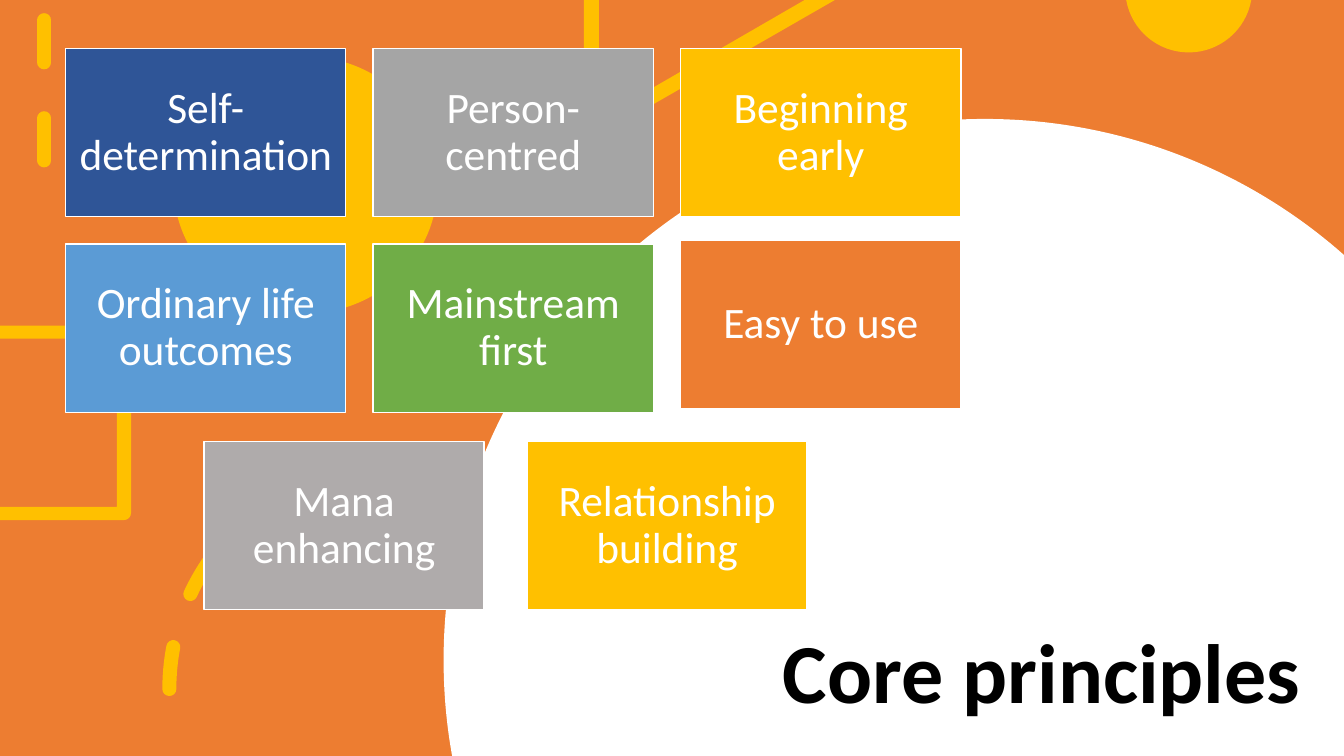
import math
import pptx
import pptx.util
import pptx.dml.color
import pptx.enum.dml
import pptx.enum.shapes
import pptx.enum.text
import pptx.oxml
import pptx.oxml.ns
import lxml.etree

TITLE = "Core principles"
TILES = [
    ("Self-determination", "navy", 0, 0),
    ("Person-centred", "grey", 1, 0),
    ("Beginning early", "gold", 2, 0),
    ("Ordinary life outcomes", "sky", 0, 1),
    ("Mainstream first", "green", 1, 1),
    ("Mana enhancing", "stone", 0.45, 2.01),
    ("Easy to use", "orange", 2, 0.98),
    ("Relationship building", "gold", 1.5, 2.01),
]
THEME = {
    "font": "Calibri", "title_size": 60, "tile_size": 31, "dash_width": 10,
    "white": "FFFFFF", "black": "000000", "orange": "ED7D31", "gold": "FFC000",
    "navy": "2F5597", "grey": "A5A5A5", "sky": "5B9BD5", "green": "70AD47", "stone": "AFABAB",
}
WIDTH, HEIGHT = 13.33, 7.5
GRID = {"left": 0.65, "top": 0.48, "column": 3.05, "row": 1.94, "width": 2.78, "height": 1.67}
INSET = 0.13
BEND = 0.07
SHAPES = pptx.enum.shapes.MSO_SHAPE
ANCHORS = pptx.enum.text.MSO_ANCHOR
ALIGNMENTS = pptx.enum.text.PP_ALIGN
Inches = pptx.util.Inches


def colour(name):
    return pptx.dml.color.RGBColor.from_string(THEME[name])


def apply(target, values):
    for name, value in values.items():
        setattr(target, name, value)


def lines(*points):
    return [[point] for point in points]


def arc(centre, radius, *angles):
    def place(angle, pull):
        cosine, sine = math.cos(angle), math.sin(angle)
        return (centre[0] + radius * (cosine - pull * sine), centre[1] - radius * (sine + pull * cosine))

    turns = [math.radians(angle) for angle in angles]
    segments = [[place(turns[0], 0)]]
    for start, end in zip(turns, turns[1:]):
        pull = 4 / 3 * math.tan((end - start) / 4)
        segments.append([place(start, pull), place(end, -pull), place(end, 0)])
    return segments


def paint(shape, fill):
    shape.shadow.inherit = False
    shape.fill.solid()
    shape.fill.fore_color.rgb = colour(fill)
    shape.line.fill.background()


def add_outline(slide, segments, fill):
    points = [(Inches(x), Inches(y)) for segment in segments for x, y in segment]
    builder = slide.shapes.build_freeform(*points[0], scale=1)
    builder.add_line_segments(points[1:], close=True)
    shape = builder.convert_to_shape()
    steps = iter(shape._element.findall(".//" + pptx.oxml.ns.qn("a:lnTo")))
    for segment in segments[1:]:
        parts = [next(steps) for point in segment]
        if len(parts) == 3:
            curve = lxml.etree.Element(pptx.oxml.ns.qn("a:cubicBezTo"))
            parts[0].addprevious(curve)
            for part in parts:
                curve.append(part[0])
                part.getparent().remove(part)
    paint(shape, fill)


def add_preset(slide, kind, box, fill):
    shape = slide.shapes.add_shape(kind, *map(Inches, box))
    paint(shape, fill)
    return shape


def dash(shape):
    shape.line.color.rgb = colour("gold")
    apply(shape.line, {"width": pptx.util.Pt(THEME["dash_width"]),
                       "dash_style": pptx.enum.dml.MSO_LINE.DASH})
    shape.line._get_or_add_ln().set("cap", "rnd")


def write(shape, text, size, tint, bold, alignment, anchor):
    frame = shape.text_frame
    apply(frame, {"text": text, "word_wrap": True, "vertical_anchor": anchor,
                  "auto_size": pptx.enum.text.MSO_AUTO_SIZE.NONE})
    paragraph = frame.paragraphs[0]
    apply(paragraph, {"alignment": alignment, "line_spacing": 0.9})
    font = paragraph.runs[0].font
    apply(font, {"name": THEME["font"], "size": pptx.util.Pt(THEME[size]), "bold": bold})
    font.color.rgb = colour(tint)


def add_title(slide):
    title = slide.shapes.title
    apply(title, {"left": Inches(5.79), "top": Inches(4.6), "width": Inches(7.21), "height": Inches(2.61)})
    write(title, TITLE, "title_size", "black", True, ALIGNMENTS.RIGHT, ANCHORS.BOTTOM)
    title._element.getparent().append(title._element)


def add_backdrop(slide):
    add_preset(slide, SHAPES.RECTANGLE, (0, 0, WIDTH, HEIGHT), "orange")
    centre, radius = (9.77, 6.55), 5.37
    right = math.degrees(math.acos((WIDTH - centre[0]) / radius))
    left = 180 + math.degrees(math.asin((HEIGHT - centre[1]) / radius))
    add_outline(slide, arc(centre, radius, right, 90, 180, left) + lines((WIDTH, HEIGHT)), "white")


def add_ornaments(slide):
    line = slide.shapes.add_connector(pptx.enum.shapes.MSO_CONNECTOR.STRAIGHT,
                                      *map(Inches, (0.44, 0.2, 0.44, 1.95)))
    dash(line)
    line._element.spPr.append(pptx.oxml.parse_xml(
        '<a:effectLst xmlns:a="http://schemas.openxmlformats.org/drawingml/2006/main"/>'))

    drop, radius = (11.79, -0.11), 0.63
    edge = math.degrees(math.asin(drop[1] / radius))
    add_outline(slide, arc(drop, radius, edge, -90, -180 - edge), "gold")
    add_preset(slide, SHAPES.OVAL, (1.72, 0.56, 2.62, 2.55), "gold")

    wedge = lines((5.79, 0), (5.94, 0), (5.94, 1.18), (7.98, 0), (8.28, 0))
    add_outline(slide, wedge + arc((5.86, 1.31), BEND, 300, 270, 180), "gold")

    bracket = lines((0, 3.23)) + arc((1.23, 3.3), BEND, 90, 0) + arc((1.23, 5.09), BEND, 0, -90)
    add_outline(slide, bracket + lines((0, 5.16), (0, 5.03), (1.16, 5.03), (1.16, 3.36), (0, 3.36)), "gold")

    sweep = slide.shapes.add_shape(SHAPES.ARC, *map(Inches, (1.68, 4.6, 4.47, 4.47)))
    sweep.shadow.inherit = False
    sweep.fill.background()
    sweep.rotation = 270
    dash(sweep)


def add_tiles(slide):
    for text, fill, column, row in TILES:
        box = (GRID["left"] + column * GRID["column"], GRID["top"] + row * GRID["row"],
               GRID["width"], GRID["height"])
        tile = add_preset(slide, SHAPES.RECTANGLE, box, fill)
        tile.line.color.rgb = colour("white")
        tile.line.width = pptx.util.Pt(1)
        write(tile, text, "tile_size", "white", False, ALIGNMENTS.CENTER, ANCHORS.MIDDLE)
        apply(tile.text_frame, {"margin_" + side: Inches(INSET) for side in ("left", "top", "right", "bottom")})


def main():
    presentation = pptx.Presentation()
    apply(presentation, {"slide_width": Inches(WIDTH), "slide_height": Inches(HEIGHT)})
    slide = presentation.slides.add_slide(presentation.slide_layouts[5])
    add_backdrop(slide)
    add_title(slide)
    add_ornaments(slide)
    add_tiles(slide)
    presentation.save("out.pptx")


if __name__ == "__main__":
    main()
